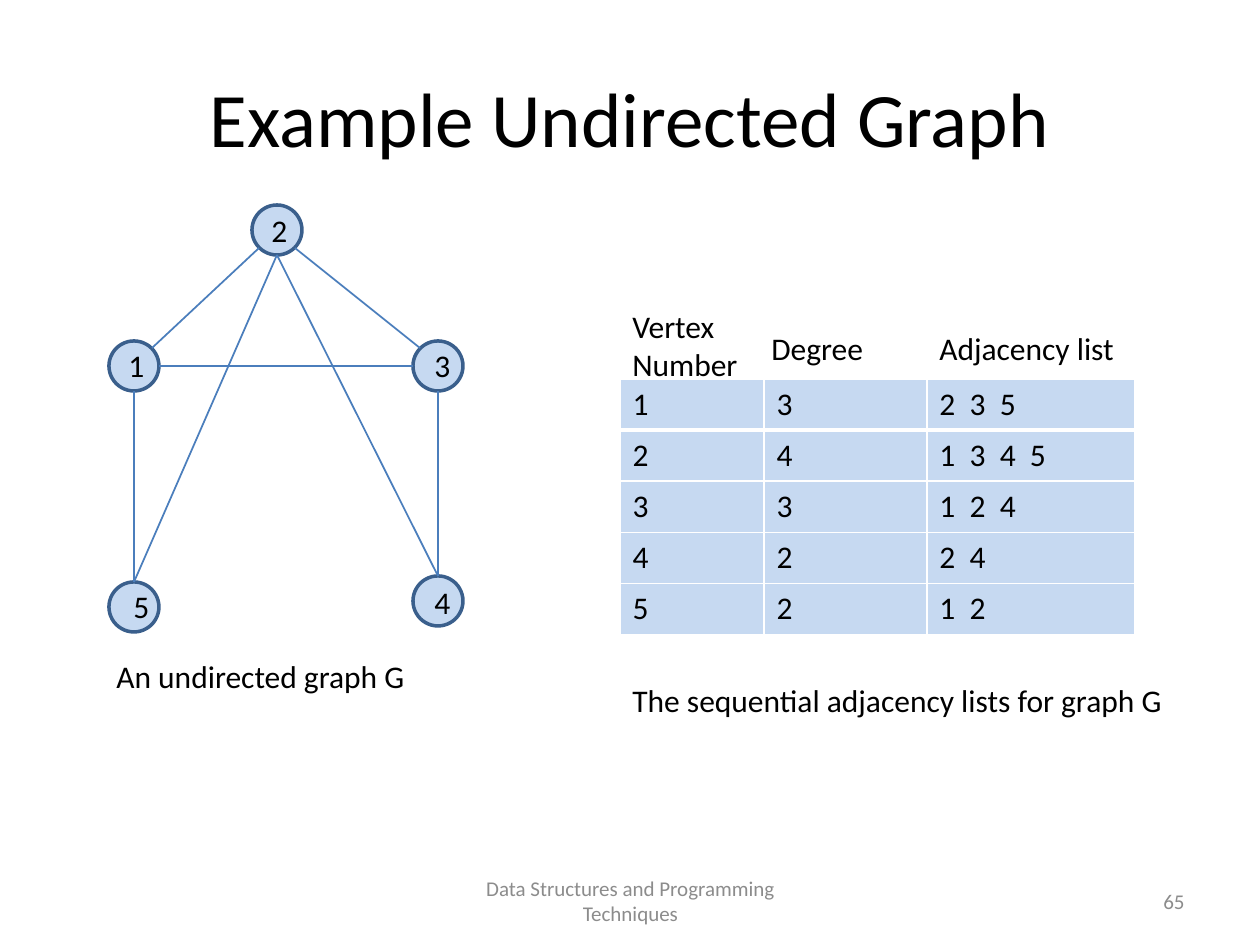
from lxml.etree import SubElement
from pptx import Presentation
from pptx.dml.color import RGBColor
from pptx.enum.shapes import MSO_CONNECTOR as Connector, MSO_SHAPE as Shape
from pptx.enum.text import MSO_ANCHOR as Anchor, PP_ALIGN as Align
from pptx.oxml import parse_xml
from pptx.oxml.ns import nsdecls, qn
from pptx.util import Pt

COLORS = {
    "text": "000000",
    "muted": "8C8C8C",
    "fill": "C6D9F1",
    "outline": "3A5F8C",
    "edge": "4B7EBC",
    "border": "FFFFFF",
}
RGB = {name: RGBColor.from_string(value) for name, value in COLORS.items()}


def px(*lengths):
    return [round(length * 914400 / 126) for length in lengths]


def add_text(place, text, size=18, color="text", align=Align.LEFT, anchor=Anchor.TOP):
    box = slide.shapes.add_textbox(*px(*place))
    frame = box.text_frame
    frame.word_wrap = True
    frame.vertical_anchor = anchor
    frame.text = text
    para = frame.paragraphs[0]
    para.alignment = align
    font = para.runs[0].font
    font.name, font.size, font.color.rgb = "Calibri", Pt(size), RGB[color]
    return box


deck = Presentation()
deck.slide_width, deck.slide_height = px(1260, 945)
slide = deck.slides.add_slide(deck.slide_layouts[5])

title = slide.shapes.title
title.left, title.top, title.width, title.height = px(63, 38, 1134, 157)
title.text_frame.text = "Example Undirected Graph"
title_para = title.text_frame.paragraphs[0]
title_para.alignment = Align.CENTER
title_font = title_para.runs[0].font
title_font.name, title_font.size, title_font.color.rgb = "Calibri", Pt(44), RGB["text"]

lists = [
    ("1", "3", "2  3  5"),
    ("2", "4", "1  3  4  5"),
    ("3", "3", "1  2  4"),
    ("4", "2", "2  4"),
    ("5", "2", "1  2"),
]
column_widths = px(144, 163, 208)
row_height = 51
table = slide.shapes.add_table(
    len(lists), 3, *px(620, 379, 515, row_height * len(lists))
).table
table.first_row = False
table.horz_banding = False
for column, width in zip(table.columns, column_widths):
    column.width = width
for row_index, values in enumerate(lists):
    table.rows[row_index].height = px(row_height)[0]
    for column_index, value in enumerate(values):
        cell = table.cell(row_index, column_index)
        cell.text = value
        font = cell.text_frame.paragraphs[0].runs[0].font
        font.name, font.size, font.color.rgb = "Calibri", Pt(18), RGB["text"]
        heavy_side = {0: "B", 1: "T"}.get(row_index)
        for side in "LRTB":
            width = Pt(3 if side == heavy_side else 1)
            cell._tc.get_or_add_tcPr().append(parse_xml(
                f'<a:ln{side} {nsdecls("a")} w="{width}"><a:solidFill>'
                f'<a:srgbClr val="{COLORS["border"]}"/></a:solidFill></a:ln{side}>'
            ))
        cell.fill.solid()
        cell.fill.fore_color.rgb = RGB["fill"]

headings = [
    ("Vertex Number", (620, 301, 139, 89)),
    ("Degree", (759, 323, 239, 51)),
    ("Adjacency list", (927, 323, 239, 51)),
]
captions = [
    ("An undirected graph G", (104, 651, 364, 51)),
    ("The sequential adjacency lists for graph G", (620, 675, 566, 51)),
]
for text, place in headings + captions:
    add_text(place, text)

radius = 25
diagonal = 18
centers = {1: (134, 366), 2: (277, 230), 3: (438, 366), 4: (438, 601), 5: (134, 607)}
label_places = {1: (119, 340), 2: (262, 205), 3: (425, 340), 4: (425, 577), 5: (124, 581)}
for vertex, (x, y) in centers.items():
    node = slide.shapes.add_shape(
        Shape.OVAL, *px(x - radius, y - radius, 2 * radius, 2 * radius)
    )
    node.shadow.inherit = False
    node.fill.solid()
    node.fill.fore_color.rgb = RGB["fill"]
    node.line.color.rgb = RGB["outline"]
    node.line.width = Pt(2)

    label = add_text((*label_places[vertex], 35, 51), str(vertex), align=Align.CENTER)
    label.text_frame.margin_left = label.text_frame.margin_right = 0

sides = {
    "top": (0, -radius),
    "bottom": (0, radius),
    "left": (-radius, 0),
    "right": (radius, 0),
    "top left": (-diagonal, -diagonal),
    "top right": (diagonal, -diagonal),
    "bottom left": (-diagonal, diagonal),
    "bottom right": (diagonal, diagonal),
}
edges = [
    (2, "bottom left", 1, "top right"),
    (2, "bottom right", 3, "top left"),
    (1, "right", 3, "left"),
    (2, "bottom", 5, "top"),
    (2, "bottom", 4, "top"),
    (5, "top", 1, "bottom"),
    (3, "bottom", 4, "top"),
]
for start, start_side, end, end_side in edges:
    ends = [
        center + offset
        for vertex, side in ((start, start_side), (end, end_side))
        for center, offset in zip(centers[vertex], sides[side])
    ]
    edge = slide.shapes.add_connector(Connector.STRAIGHT, *px(*ends))
    edge.line.color.rgb = RGB["edge"]
    edge.line.width = Pt(1)
    SubElement(edge._element.spPr, qn("a:effectLst"))

add_text((431, 876, 399, 50), "Data Structures and Programming Techniques",
         12, "muted", Align.CENTER, Anchor.MIDDLE)
add_text((903, 876, 294, 50), "65", 12, "muted", Align.RIGHT, Anchor.MIDDLE)

deck.save("out.pptx")
